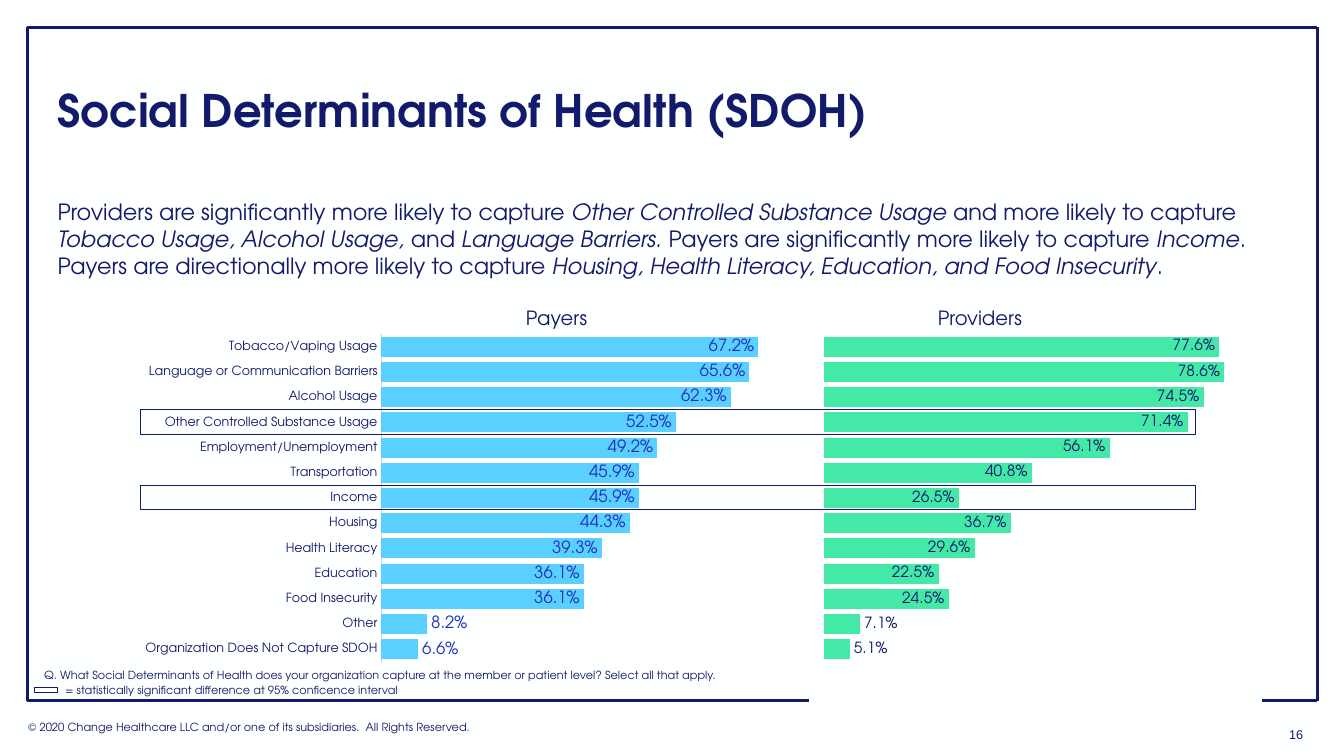
from lxml import etree
from pptx import Presentation
from pptx.chart.data import CategoryChartData
from pptx.dml.color import RGBColor
from pptx.enum.chart import XL_CHART_TYPE as CT, XL_LABEL_POSITION as LP, XL_TICK_MARK as TM
from pptx.enum.shapes import MSO_CONNECTOR as CONN, MSO_SHAPE as SHAPE
from pptx.enum.text import MSO_ANCHOR as ANCHOR, MSO_AUTO_SIZE as FIT, PP_ALIGN as ALIGN
from pptx.oxml import parse_xml
from pptx.oxml.ns import nsdecls, qn
from pptx.util import Inches, Pt

NAVY = RGBColor(0x12, 0x1A, 0x6C)
BLUE = RGBColor(0x20, 0x2E, 0xBE)
SKY = RGBColor(0x59, 0xD0, 0xFF)
GREEN = RGBColor(0x45, 0xE9, 0xA7)
AXIS = RGBColor(0xCE, 0xD1, 0xF7)
PAPER = RGBColor(0xFE, 0xFF, 0xFF)
FONT = "TeX Gyre Adventor"
W, H = Inches(13.33), Inches(7.5)
CHART_TOP, CHART_H = 40.8, 49.33
PLOT_Y, PLOT_H = 0.069, 0.879
PERCENT = "0.0%"

ROWS = [
    ("Tobacco/Vaping Usage", 0.672, 0.776),
    ("Language or Communication Barriers", 0.656, 0.786),
    ("Alcohol Usage", 0.623, 0.745),
    ("Other Controlled Substance Usage", 0.525, 0.714),
    ("Employment/Unemployment", 0.492, 0.561),
    ("Transportation", 0.459, 0.408),
    ("Income", 0.459, 0.265),
    ("Housing", 0.443, 0.367),
    ("Health Literacy", 0.393, 0.296),
    ("Education", 0.361, 0.225),
    ("Food Insecurity", 0.361, 0.245),
    ("Other", 0.082, 0.071),
    ("Organization Does Not Capture SDOH", 0.066, 0.051),
]
SIGNIFICANT = ("Other Controlled Substance Usage", "Income")
SUMMARY = [
    "Providers are significantly more likely to capture ",
    "Other Controlled Substance Usage",
    " and more likely to capture ",
    "Tobacco Usage, Alcohol Usage,",
    " and ",
    "Language Barriers.",
    " Payers are significantly more likely to capture ",
    "Income",
    ". Payers are directionally more likely to capture ",
    "Housing, Health Literacy, Education, and Food Insecurity",
    ".",
]


def share(x, y):
    return round(W * x / 100), round(H * y / 100)


def style(font, size, color=NAVY, name=FONT):
    font.size, font.name = Pt(size), name
    font.color.rgb = color


def place(sp, x, y, w, h):
    sp.left, sp.top = share(x, y)
    sp.width, sp.height = share(w, h)


def add_label(slide, box, text, size, align=ALIGN.LEFT, name=FONT, wrap=True):
    tf = slide.shapes.add_textbox(*share(*box[:2]), *share(*box[2:])).text_frame
    tf.text, tf.word_wrap = text, wrap
    tf.auto_size = FIT.SHAPE_TO_FIT_TEXT
    p = tf.paragraphs[0]
    p.alignment = align
    style(p.runs[0].font, size, name=name)
    return tf


def add_outline(slide, *box):
    sp = slide.shapes.add_shape(SHAPE.RECTANGLE, *share(*box[:2]), *share(*box[2:]))
    sp.shadow.inherit = False
    sp.fill.background()
    sp.line.color.rgb, sp.line.width = NAVY, Pt(0.5)


def add_frame(slide):
    left, right, top, bottom = 2.03, 98, 3.6, 92.67
    for start, end in [
        ((60.17, bottom), (left, bottom)),
        ((right, top), (left, top)),
        ((right, top), (right, bottom)),
        ((left, top), (left, bottom)),
        ((right, bottom), (93.92, bottom)),
    ]:
        line = slide.shapes.add_connector(CONN.STRAIGHT, *share(*start), *share(*end))
        line.line.color.rgb, line.line.width = NAVY, Pt(2)
        etree.SubElement(line._element.spPr, qn("a:effectLst"))


def fix_plot(chart, x, w):
    space = chart._chartSpace
    area = space.find(".//" + qn("c:plotArea"))
    for old in area.findall(qn("c:layout")):
        area.remove(old)
    values = zip("xywh", (x, PLOT_Y, w, PLOT_H))
    sizes = "".join(f'<c:{k} val="{v}"/>' for k, v in values)
    area.insert(0, parse_xml(
        f'<c:layout {nsdecls("c")}><c:manualLayout><c:layoutTarget val="inner"/>'
        f'<c:xMode val="edge"/><c:yMode val="edge"/>{sizes}</c:manualLayout></c:layout>'))
    space.find(qn("c:chart")).addnext(parse_xml(
        f'<c:spPr {nsdecls("c", "a")}><a:noFill/><a:ln><a:noFill/></a:ln></c:spPr>'))


def add_bars(slide, left, width, names, values, plot, top_value, color, size, label_color):
    data = CategoryChartData(number_format=PERCENT)
    data.categories = names
    data.add_series("Series 1", values)
    chart = slide.shapes.add_chart(
        CT.BAR_CLUSTERED, *share(left, CHART_TOP), *share(width, CHART_H), data).chart
    chart.has_title = chart.has_legend = False
    style(chart.font, size, name="Calibri")
    fix_plot(chart, *plot)

    axis = chart.value_axis
    axis.minimum_scale, axis.maximum_scale = 0, top_value
    axis.has_major_gridlines = axis.visible = False

    bars = chart.plots[0]
    bars.gap_width, bars.vary_by_categories = 26, False
    series = bars.series[0]
    series.format.fill.solid()
    series.format.fill.fore_color.rgb = color
    labels = series.data_labels
    labels.show_value, labels.position = True, LP.INSIDE_END
    labels.number_format, labels.number_format_is_linked = PERCENT, False
    style(labels.font, size, label_color)
    for i in range(2):
        label = series.points[i].data_label
        style(label.font, size, label_color)
        label.position = LP.OUTSIDE_END
    return chart


def fill_title(sp):
    place(sp, 3.53, 5.33, 93.02, 19.33)
    tf = sp.text_frame
    tf.text, tf.vertical_anchor = "Social Determinants of Health (SDOH)", ANCHOR.MIDDLE
    p = tf.paragraphs[0]
    p.alignment, p.line_spacing = ALIGN.LEFT, 0.9
    style(p.runs[0].font, 32)
    p.runs[0].font.bold = True


def fill_summary(sp):
    place(sp, 3.53, 25.6, 93.02, 62.53)
    p = sp.text_frame.paragraphs[0]
    pPr = p._p.get_or_add_pPr()
    pPr.set("marL", "0")
    pPr.set("indent", "0")
    etree.SubElement(pPr, qn("a:buNone"))
    p.space_before = Pt(0)
    for i, text in enumerate(SUMMARY):
        r = p.add_run()
        r.text = text
        style(r.font, 16)
        r.font.italic = i % 2 == 1


def main():
    prs = Presentation()
    prs.slide_width, prs.slide_height = W, H
    slide = prs.slides.add_slide(prs.slide_layouts[1])
    slide.background.fill.solid()
    slide.background.fill.fore_color.rgb = PAPER

    add_frame(slide)
    add_label(slide, (1.35, 94.67, 48.9, 3.2),
              "© 2020 Change Healthcare LLC and/or one of its subsidiaries.\u00a0 All Rights Reserved.", 8)
    number = add_label(slide, (94.9, 94.4, 3.08, 5.6), "16", 9, ALIGN.CENTER, "Arial")
    number.auto_size, number.vertical_anchor = FIT.NONE, ANCHOR.MIDDLE
    fill_title(slide.shapes.title)
    fill_summary(slide.placeholders[1])

    names, payers, providers = zip(*reversed(ROWS))
    chart = add_bars(slide, 8.18, 56.71, names, payers, (0.356, 0.589), 0.8, SKY, 12, BLUE)
    axis = chart.category_axis
    axis.major_tick_mark = axis.minor_tick_mark = TM.NONE
    axis.format.line.color.rgb, axis.format.line.width = AXIS, Pt(0.75)
    style(axis.tick_labels.font, 9)
    numbers = [str(i + 1) for i in range(len(ROWS))]
    chart = add_bars(slide, 48.31, 47.41, numbers, providers, (0.274, 0.72), 0.9, GREEN, 11, NAVY)
    chart.category_axis.visible = False

    add_label(slide, (34.81, 39.87, 13.2, 4.53), "Payers", 14, ALIGN.CENTER)
    add_label(slide, (65.64, 39.87, 14.55, 4.53), "Providers", 14, ALIGN.CENTER)
    add_label(slide, (2.55, 87.73, 61.52, 3.2),
              "Q. What Social Determinants of Health does your organization capture "
              "at the member or patient level? Select all that apply.", 8)
    add_label(slide, (4.13, 89.73, 26.56, 3.2),
              "= statistically significant difference at 95% conficence interval", 8, wrap=False)
    add_outline(slide, 2.55, 90.93, 1.73, 0.67)

    pitch = CHART_H * PLOT_H / len(ROWS)
    for i, row in enumerate(ROWS):
        if row[0] in SIGNIFICANT:
            add_outline(slide, 10.43, CHART_TOP + CHART_H * PLOT_Y + i * pitch, 78.54, 3.2)
    prs.save("out.pptx")


if __name__ == "__main__":
    main()
